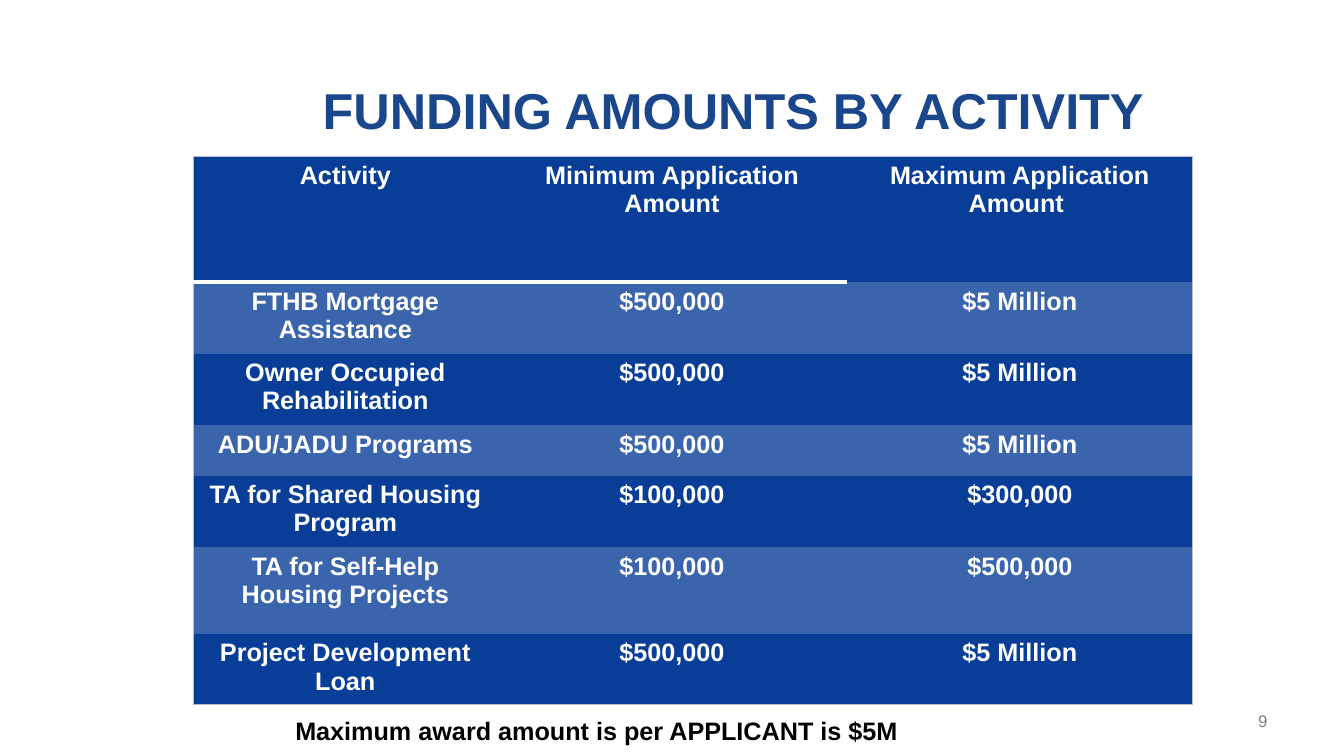
from lxml.etree import SubElement
from pptx import Presentation
from pptx.dml.color import RGBColor
from pptx.enum.text import MSO_ANCHOR, PP_ALIGN
from pptx.oxml.ns import qn
from pptx.util import Inches, Pt

COLORS = {
    "title": "1A468C", "dark": "083E97", "light": "3A65AC", "white": "FFFFFF",
    "edge": "B8BCCC", "black": "000000", "gray": "808080",
}
PLAIN_TABLE_STYLE = "{2D5ABB26-0587-4C30-8999-92F81FD0307C}"


def write_text(frame, text, size=18, color="white", bold=True,
               align=PP_ALIGN.CENTER, anchor=MSO_ANCHOR.TOP):
    frame.word_wrap = True
    frame.vertical_anchor = anchor
    para = frame.paragraphs[0]
    para.alignment = align
    span = para.add_run()
    span.text = text
    span.font.name = "Arial"
    span.font.size = Pt(size)
    span.font.bold = bold
    span.font.color.rgb = RGBColor.from_string(COLORS[color])


def add_border(cell, side, color, width):
    """Draw one cell edge; call in the order L, R, T, B and before the fill."""
    line = SubElement(cell._tc.get_or_add_tcPr(), qn(f"a:ln{side}"), w=str(Pt(width)))
    fill = SubElement(line, qn("a:solidFill"))
    SubElement(fill, qn("a:srgbClr"), val=COLORS[color])


deck = Presentation()
deck.slide_width = Inches(13.33)
deck.slide_height = Inches(7.5)
page = deck.slides.add_slide(deck.slide_layouts[6])

# Title
title = page.shapes.add_textbox(Inches(2.56), Inches(0.5), Inches(9.56), Inches(1.17)).text_frame
title.margin_left = title.margin_right = title.margin_top = title.margin_bottom = 0
write_text(title, "FUNDING AMOUNTS BY ACTIVITY ", size=36, color="title",
           anchor=MSO_ANCHOR.MIDDLE)

# Funding table
funding = [
    ("Activity", "Minimum Application Amount", "Maximum Application Amount "),
    ("FTHB Mortgage Assistance", "$500,000", "$5 Million"),
    ("Owner Occupied Rehabilitation", "$500,000", "$5 Million"),
    ("ADU/JADU Programs", "$500,000", "$5 Million"),
    ("TA for Shared Housing Program", "$100,000", "$300,000"),
    ("TA for Self-Help Housing Projects", "$100,000", "$500,000"),
    ("Project Development Loan", "$500,000", "$5 Million"),
]
column_widths = [3.01, 3.47, 3.43]
row_heights = [1.25, 0.71, 0.71, 0.5, 0.71, 0.86, 0.68]
last_row, last_column = len(row_heights) - 1, len(column_widths) - 1

frame = page.shapes.add_table(len(row_heights), len(column_widths), Inches(1.92), Inches(1.55),
                              Inches(sum(column_widths)), Inches(sum(row_heights)))
table = frame.table
table._tbl.tblPr.find(qn("a:tableStyleId")).text = PLAIN_TABLE_STYLE
for column, width in zip(table.columns, column_widths):
    column.width = Inches(width)
for row, height in zip(table.rows, row_heights):
    row.height = Inches(height)

for r, values in enumerate(funding):
    for c, value in enumerate(values):
        cell = table.cell(r, c)
        write_text(cell.text_frame, value)
        if c == 0:
            add_border(cell, "L", "edge", 0.75)
        if c == last_column:
            add_border(cell, "R", "edge", 0.75)
        if r == 0:
            add_border(cell, "T", "edge", 0.75)
        # The white rule under the header stops before the last column
        if r == 0 and c < last_column:
            add_border(cell, "B", "white", 3)
        if r == last_row:
            add_border(cell, "B", "edge", 0.75)
        cell.fill.solid()
        cell.fill.fore_color.rgb = RGBColor.from_string(COLORS["light" if r % 2 else "dark"])

# Footnote and page number
note = page.shapes.add_textbox(Inches(2.83), Inches(7.05), Inches(6.69), Inches(0.4))
write_text(note.text_frame, "Maximum award amount is per APPLICANT is $5M",
           color="black", align=PP_ALIGN.LEFT)
number = page.shapes.add_textbox(Inches(9.56), Inches(6.95), Inches(3.11), Inches(0.4))
write_text(number.text_frame, "9", size=12, color="gray", bold=False,
           align=PP_ALIGN.RIGHT, anchor=MSO_ANCHOR.MIDDLE)

deck.save("out.pptx")
